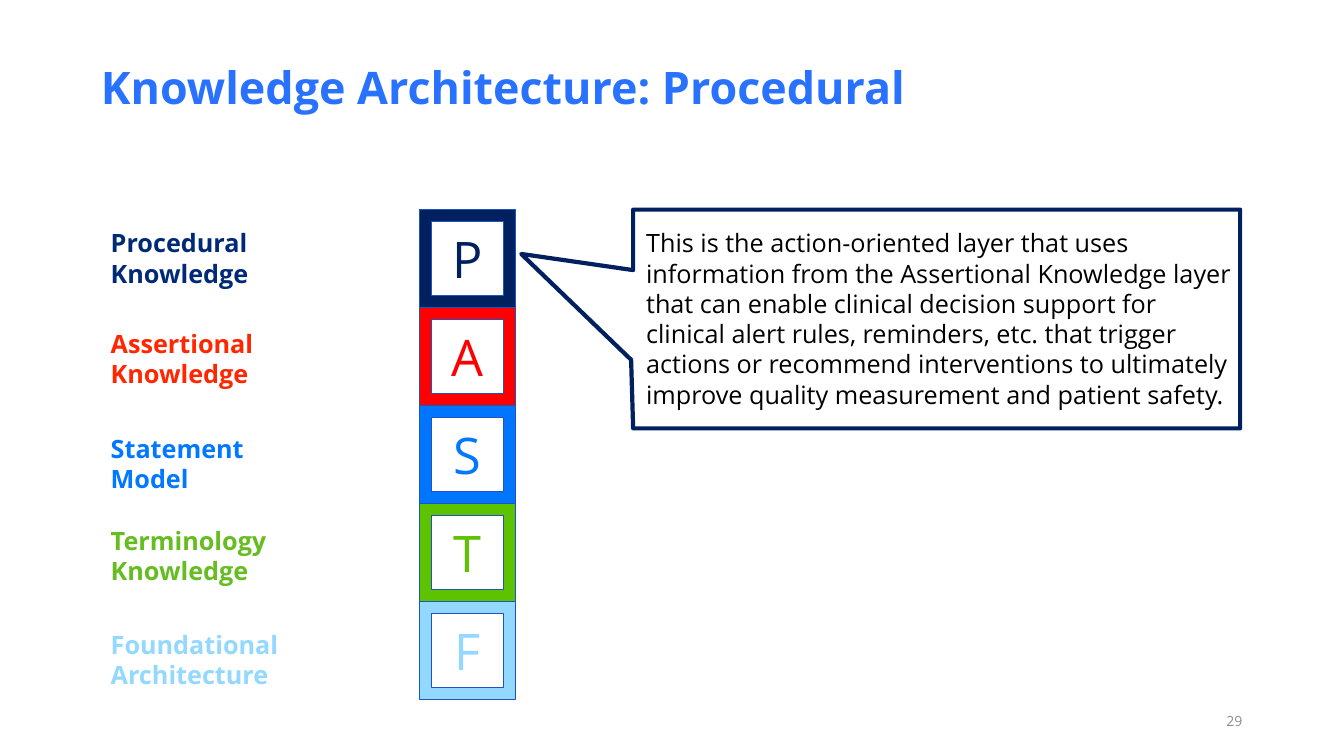
"""Build the slide on the procedural layer of the knowledge architecture."""
from pptx import Presentation
from pptx.dml.color import RGBColor
from pptx.enum.shapes import MSO_SHAPE
from pptx.enum.text import MSO_ANCHOR, MSO_AUTO_SIZE, PP_ALIGN
from pptx.util import Inches, Pt

FRAME, RECTANGLE = MSO_SHAPE.FRAME, MSO_SHAPE.RECTANGLE
TOP, MIDDLE = MSO_ANCHOR.TOP, MSO_ANCHOR.MIDDLE
LEFT, CENTER, RIGHT = PP_ALIGN.LEFT, PP_ALIGN.CENTER, PP_ALIGN.RIGHT
NO_AUTOFIT = MSO_AUTO_SIZE.NONE
FONT = "Open Sans"
NAVY = "002060"


def rgb(value):
    return RGBColor.from_string(value)


def write(shape, text, size=18, color="000000", bold=False, align=LEFT,
          anchor=TOP, insets=(0.1, 0.05, 0.1, 0.05), spacing=None):
    frame = shape.text_frame
    frame.word_wrap = True
    frame.auto_size = NO_AUTOFIT
    frame.vertical_anchor = anchor
    (frame.margin_left, frame.margin_top,
     frame.margin_right, frame.margin_bottom) = map(Inches, insets)
    frame.text = text
    for paragraph in frame.paragraphs:
        paragraph.alignment = align
        paragraph.line_spacing = spacing
        for run in paragraph.runs:
            run.font.name = FONT
            run.font.size = Pt(size)
            run.font.bold = bold
            run.font.color.rgb = rgb(color)


prs = Presentation()
prs.slide_width, prs.slide_height = Inches(13.33), Inches(7.5)
slide = prs.slides.add_slide(prs.slide_layouts[5])
shapes = slide.shapes

title = shapes.title
title.left, title.top = Inches(1), Inches(0.41)
title.width, title.height = Inches(10.48), Inches(0.94)
write(title, "Knowledge Architecture: Procedural", size=32, color="2972FF",
      bold=True, anchor=MIDDLE, insets=(0, 0.05, 0.1, 0), spacing=0.8)

callout_points = [(12.3, 2.08), (12.3, 4.25), (6.28, 4.25), (6.26, 3.57),
                  (5.17, 2.52), (6.28, 2.68), (6.28, 2.08)]
corners = [(Inches(x), Inches(y)) for x, y in callout_points]
builder = shapes.build_freeform(*corners[0])
builder.add_line_segments(corners[1:], close=True)
callout = builder.convert_to_shape()
callout.shadow.inherit = False
callout.fill.background()
callout.line.color.rgb = rgb(NAVY)
callout.line.width = Pt(3)

layers = [
    ("P", NAVY, NAVY, "Procedural Knowledge", "002A77", 2.21, 2.93),
    ("A", "FF0000", "FF0000", "Assertional Knowledge", "FF2600", 3.21, 2.93),
    ("S", "0076FF", "0078FF", "Statement\nModel", "0078FF", 4.25, 3.43),
    ("T", "5DC200", "5DC200", "Terminology Knowledge", "66BD21", 5.16, 3.16),
    ("F", "93D8FF", "93D8FF", "Foundational Architecture", "93D8FF", 6.19, 3.43),
]
stack_top, stack_bottom = 2.08, 6.94
tile_height = (stack_bottom - stack_top) / len(layers)

for row, (letter, tile_color, letter_color, name, name_color,
          name_top, name_width) in enumerate(layers):
    label = shapes.add_shape(RECTANGLE, Inches(1), Inches(name_top),
                             Inches(name_width), Inches(0.71))
    label.shadow.inherit = False
    label.fill.solid()
    label.fill.fore_color.rgb = rgb("FFFFFF")
    label.line.fill.background()
    write(label, name, color=name_color, bold=True)

    tile = shapes.add_shape(FRAME, Inches(4.16),
                            Inches(stack_top + row * tile_height),
                            Inches(0.95), Inches(tile_height))
    tile.shadow.inherit = False
    tile.fill.solid()
    tile.fill.fore_color.rgb = rgb(tile_color)
    tile.line.color.rgb = rgb("1E54BD")
    tile.line.width = Pt(1)
    write(tile, letter, size=36, color=letter_color, align=CENTER, anchor=MIDDLE)

explanation = shapes.add_textbox(Inches(6.31), Inches(2.16),
                                 Inches(6.02), Inches(2.32))
write(explanation,
      "This is the action-oriented layer that uses information from the "
      "Assertional Knowledge layer that can enable clinical decision support "
      "for clinical alert rules, reminders, etc. that trigger actions or "
      "recommend interventions to ultimately improve quality measurement and "
      "patient safety.", insets=(0.1, 0.1, 0.1, 0.1))

page_number = shapes.add_textbox(Inches(9.42), Inches(6.95), Inches(3), Inches(0.4))
write(page_number, "29", size=10, color="8C8C8C", align=RIGHT, anchor=MIDDLE)

prs.save("out.pptx")
